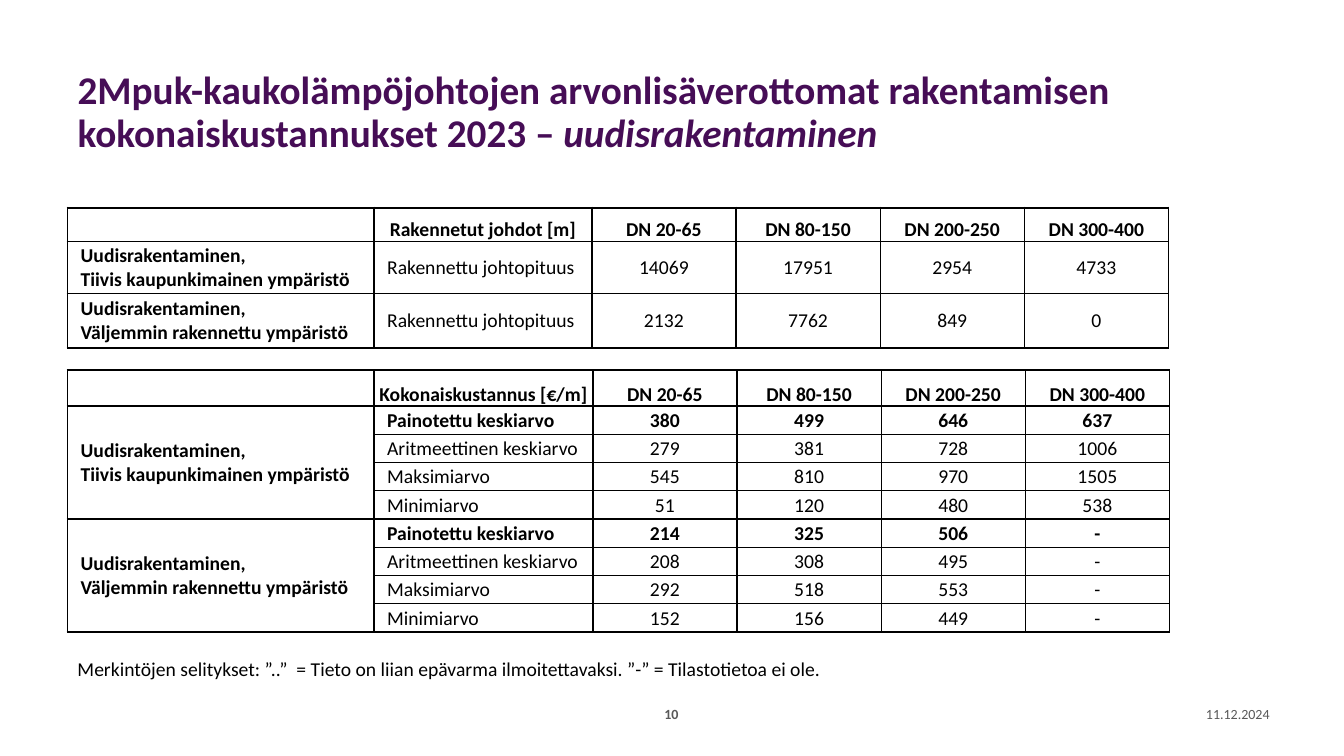
"""Build the slide on construction costs of new 2Mpuk district heating pipes in 2023."""
import pptx
import pptx.dml.color
import pptx.enum.text
import pptx.oxml
import pptx.oxml.ns
import pptx.util
from pptx.util import Inches

COLORS = {"title": "460D56", "text": "000000", "footer": "595959", "cell": "FFFFFF"}
FONT = "Calibri"
TITLE = ("2Mpuk-kaukolämpöjohtojen arvonlisäverottomat rakentamisen "
         "kokonaiskustannukset 2023 – ", "uudisrakentaminen")
NOTE = "Merkintöjen selitykset: ”..”  = Tieto on liian epävarma ilmoitettavaksi. ”-” = Tilastotietoa ei ole."
DATE = "11.12.2024"
PAGE = "10"

DIAMETERS = ["DN 20-65", "DN 80-150", "DN 200-250", "DN 300-400"]
DENSE = "Uudisrakentaminen,\nTiivis kaupunkimainen ympäristö"
SPARSE = "Uudisrakentaminen,\nVäljemmin rakennettu ympäristö"
LENGTH = "Rakennettu johtopituus"
WEIGHTED = "Painotettu keskiarvo"
MEAN = "Aritmeettinen keskiarvo"
MAXIMUM = "Maksimiarvo"
MINIMUM = "Minimiarvo"

LENGTHS = {
    "heading": "Rakennetut johdot [m]", "top": 2.06, "label_width": 2.16,
    "heights": [0.34, 0.51, 0.54], "heavy_rows": {0, 3},
    "groups": [
        (DENSE, [(LENGTH, "14069", "17951", "2954", "4733")]),
        (SPARSE, [(LENGTH, "2132", "7762", "849", "0")]),
    ],
}
COSTS = {
    "heading": "Kokonaiskustannus [€/m]", "top": 3.67, "label_width": 2.17,
    "heights": [0.36] + [0.28] * 8, "heavy_rows": {0, 1, 5, 9},
    "groups": [
        (DENSE, [
            (WEIGHTED, "380", "499", "646", "637"),
            (MEAN, "279", "381", "728", "1006"),
            (MAXIMUM, "545", "810", "970", "1505"),
            (MINIMUM, "51", "120", "480", "538"),
        ]),
        (SPARSE, [
            (WEIGHTED, "214", "325", "506", "-"),
            (MEAN, "208", "308", "495", "-"),
            (MAXIMUM, "292", "518", "553", "-"),
            (MINIMUM, "152", "156", "449", "-"),
        ]),
    ],
}

LEFT, WIDTH = 0.67, 10.91
ENVIRONMENT_WIDTH, VALUE_WIDTH = 3.04, 1.43
HEAVY_COLUMNS = {0, 2, 6}
ALIGN = pptx.enum.text.PP_ALIGN
ANCHOR = pptx.enum.text.MSO_ANCHOR


def format_text(frame, size, color, bold=False, align=ALIGN.LEFT):
    for paragraph in frame.paragraphs:
        paragraph.alignment = align
        for run in paragraph.runs:
            run.font.name = FONT
            run.font.size = pptx.util.Pt(size)
            run.font.bold = bold
            run.font.color.rgb = pptx.dml.color.RGBColor.from_string(COLORS[color])


def add_text(slide, text, box, size, color, anchor=ANCHOR.MIDDLE, **style):
    frame = slide.shapes.add_textbox(*map(Inches, box)).text_frame
    frame.word_wrap = True
    frame.vertical_anchor = anchor
    frame.text = text
    format_text(frame, size, color, **style)


def set_borders(cell, row, column, heavy_rows):
    edges = {
        "lnL": column in HEAVY_COLUMNS, "lnR": column + 1 in HEAVY_COLUMNS,
        "lnT": row in heavy_rows, "lnB": row + 1 in heavy_rows,
    }
    properties = cell._tc.get_or_add_tcPr()
    for edge, heavy in edges.items():
        width = pptx.util.Pt(1.5 if heavy else 1)
        properties.append(pptx.oxml.parse_xml(
            f'<a:{edge} {pptx.oxml.ns.nsdecls("a")} w="{width}"><a:solidFill>'
            f'<a:srgbClr val="{COLORS["text"]}"/></a:solidFill></a:{edge}>'))


def format_cell(cell, row, column, bold):
    cell.fill.solid()
    cell.fill.fore_color.rgb = pptx.dml.color.RGBColor.from_string(COLORS["cell"])
    indented = row > 0 and column < 2
    cell.margin_left = Inches(0.13 if indented else 0.01)
    cell.margin_right = cell.margin_top = Inches(0.01)
    cell.margin_bottom = 0
    cell.vertical_anchor = ANCHOR.MIDDLE if row else ANCHOR.BOTTOM
    format_text(cell.text_frame, 14, "text", bold, ALIGN.LEFT if indented else ALIGN.CENTER)


def add_pipe_table(slide, content):
    rows = [("", content["heading"], *DIAMETERS)]
    spans = []
    for environment, measures in content["groups"]:
        spans.append((len(rows), len(rows) + len(measures) - 1))
        for index, measure in enumerate(measures):
            rows.append(("" if index else environment, *measure))

    heights = content["heights"]
    widths = [ENVIRONMENT_WIDTH, content["label_width"]] + [VALUE_WIDTH] * len(DIAMETERS)
    table = slide.shapes.add_table(
        len(rows), len(widths), Inches(LEFT), Inches(content["top"]),
        Inches(WIDTH), Inches(sum(heights))).table
    table.first_row = table.horz_banding = False
    for table_column, width in zip(table.columns, widths):
        table_column.width = Inches(width)
    for table_row, height in zip(table.rows, heights):
        table_row.height = Inches(height)

    for row, texts in enumerate(rows):
        for column, text in enumerate(texts):
            cell = table.cell(row, column)
            cell.text_frame.text = text
            set_borders(cell, row, column, content["heavy_rows"])
            bold = row == 0 or column == 0 or texts[1] == WEIGHTED
            format_cell(cell, row, column, bold)
    for first, last in spans:
        if last > first:
            table.cell(first, 0).merge(table.cell(last, 0))


def add_title(slide):
    title = slide.shapes.title
    title.left, title.top, title.width, title.height = map(Inches, (LEFT, 0.4, WIDTH, 1.45))
    frame = title.text_frame
    frame.word_wrap = True
    frame.auto_size = pptx.enum.text.MSO_AUTO_SIZE.NONE
    frame.vertical_anchor = ANCHOR.MIDDLE
    paragraph = frame.paragraphs[0]
    paragraph.line_spacing = 0.9
    for text in TITLE:
        paragraph.add_run().text = text
    format_text(frame, 28, "title", bold=True)
    paragraph.runs[1].font.italic = True


def main():
    presentation = pptx.Presentation()
    presentation.slide_width = Inches(13.33)
    presentation.slide_height = Inches(7.5)
    slide = presentation.slides.add_slide(presentation.slide_layouts[5])
    add_title(slide)
    add_text(slide, DATE, (11.58, 6.95, 1.11, 0.27), 10, "footer", align=ALIGN.RIGHT)
    add_text(slide, PAGE, (6.36, 6.95, 0.6, 0.27), 10, "footer", bold=True, align=ALIGN.CENTER)
    for content in (LENGTHS, COSTS):
        add_pipe_table(slide, content)
    add_text(slide, NOTE, (LEFT, 6.47, WIDTH, 0.34), 14, "text", anchor=ANCHOR.TOP)
    presentation.save("out.pptx")


if __name__ == "__main__":
    main()
